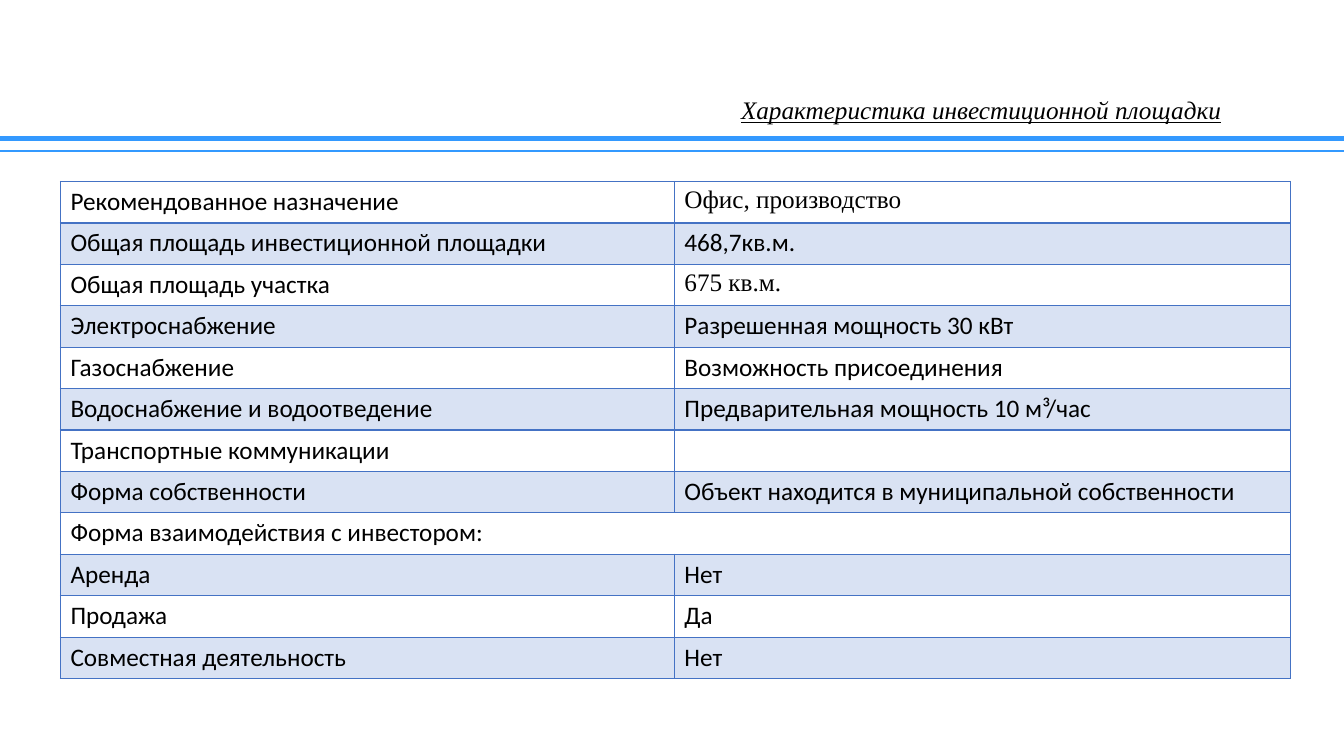
from lxml import etree
from pptx import Presentation
from pptx import util as u
from pptx.dml import color
from pptx.enum import shapes, text
from pptx.oxml import ns

Pt = u.Pt
COLOURS = {"rule": "3399FF", "grid": "4472C4", "ink": "000000"}
SANS, SERIF = "Calibri", "Times New Roman"
ROW_HEIGHT = 29.6
BAND_ALPHA = "20000"
ROWS = [
    ("Рекомендованное назначение", "Офис, производство"),
    ("Общая площадь инвестиционной площадки", "468,7кв.м."),
    ("Общая площадь участка", "675 кв.м."),
    ("Электроснабжение", "Разрешенная мощность 30 кВт"),
    ("Газоснабжение", "Возможность присоединения"),
    ("Водоснабжение и водоотведение", "Предварительная мощность 10 м³/час"),
    ("Транспортные коммуникации", ""),
    ("Форма собственности", "Объект находится в муниципальной собственности"),
    ("Форма взаимодействия с инвестором:", None),
    ("Аренда", "Нет"),
    ("Продажа", "Да"),
    ("Совместная деятельность", "Нет"),
]
SERIF_VALUES = {"Офис, производство", "675 кв.м."}


def rgb(name):
    """Return the named colour."""
    return color.RGBColor.from_string(COLOURS[name])


def set_font(font, **formats):
    """Apply format values to a font, 18 pt black unless told otherwise."""
    for key, value in {"size": Pt(18), **formats}.items():
        setattr(font, key, value)
    font.color.rgb = rgb("ink")


def add_rule(page, top, width):
    """Draw a horizontal rule across the whole page."""
    rule = page.shapes.add_connector(
        shapes.MSO_CONNECTOR.STRAIGHT, Pt(0), Pt(top), Pt(960), Pt(top))
    rule.line.color.rgb = rgb("rule")
    rule.line.width = Pt(width)
    etree.SubElement(rule._element.spPr, ns.qn("a:effectLst"))


def add_title(page, words):
    """Add the underlined italic heading."""
    box = page.shapes.add_textbox(Pt(480.2), Pt(69.8), Pt(441.4), Pt(19.4))
    frame = box.text_frame
    frame.word_wrap = True
    frame.vertical_anchor = text.MSO_ANCHOR.MIDDLE
    para = frame.paragraphs[0]
    para.alignment = text.PP_ALIGN.CENTER
    para.line_spacing = 0.9
    span = para.add_run()
    span.text = words
    set_font(span.font, name=SERIF, italic=True, underline=True)


def set_borders(cell, bottom):
    """Outline a cell with grid lines."""
    properties = cell._tc.get_or_add_tcPr()
    for side, width in {"L": 1, "R": 1, "T": 1, "B": bottom}.items():
        line = etree.SubElement(
            properties, ns.qn(f"a:ln{side}"), w=str(Pt(width)))
        fill = etree.SubElement(line, ns.qn("a:solidFill"))
        etree.SubElement(fill, ns.qn("a:srgbClr"), val=COLOURS["grid"])


def set_fill(cell, banded):
    """Give a cell a translucent band or no fill."""
    if not banded:
        cell.fill.background()
        return
    cell.fill.solid()
    cell.fill.fore_color.rgb = rgb("grid")
    tint = cell._tc.tcPr.find(ns.qn("a:solidFill"))[0]
    etree.SubElement(tint, ns.qn("a:alpha"), val=BAND_ALPHA)


def add_site_table(page):
    """Add the table of site characteristics."""
    frame = page.shapes.add_table(
        len(ROWS), 2, Pt(43.2), Pt(129.6), Pt(878.4), Pt(ROW_HEIGHT * len(ROWS)))
    table = frame.table
    table.first_row = table.horz_banding = False
    for column, width in zip(table.columns, (438.5, 439.9)):
        column.width = Pt(width)
    for index, values in enumerate(ROWS):
        table.rows[index].height = Pt(ROW_HEIGHT)
        for cell, value in zip(table.rows[index].cells, values):
            set_borders(cell, bottom=2 if index == 0 else 1)
            set_fill(cell, banded=index % 2 == 1)
            para = cell.text_frame.paragraphs[0]
            set_font(para.font, name=SERIF if value in SERIF_VALUES else SANS)
            if value:
                span = para.add_run()
                span.text = value
                set_font(span.font, name=para.font.name)
        if values[1] is None:
            table.cell(index, 0).merge(table.cell(index, 1))


def main():
    """Build and save the deck."""
    deck = Presentation()
    deck.slide_width, deck.slide_height = Pt(960), Pt(540)
    page = deck.slides.add_slide(deck.slide_layouts[6])
    add_rule(page, 99.2, 3.5)
    add_rule(page, 108, 1.5)
    add_title(page, "Характеристика инвестиционной площадки")
    add_site_table(page)
    deck.save("out.pptx")


if __name__ == "__main__":
    main()
